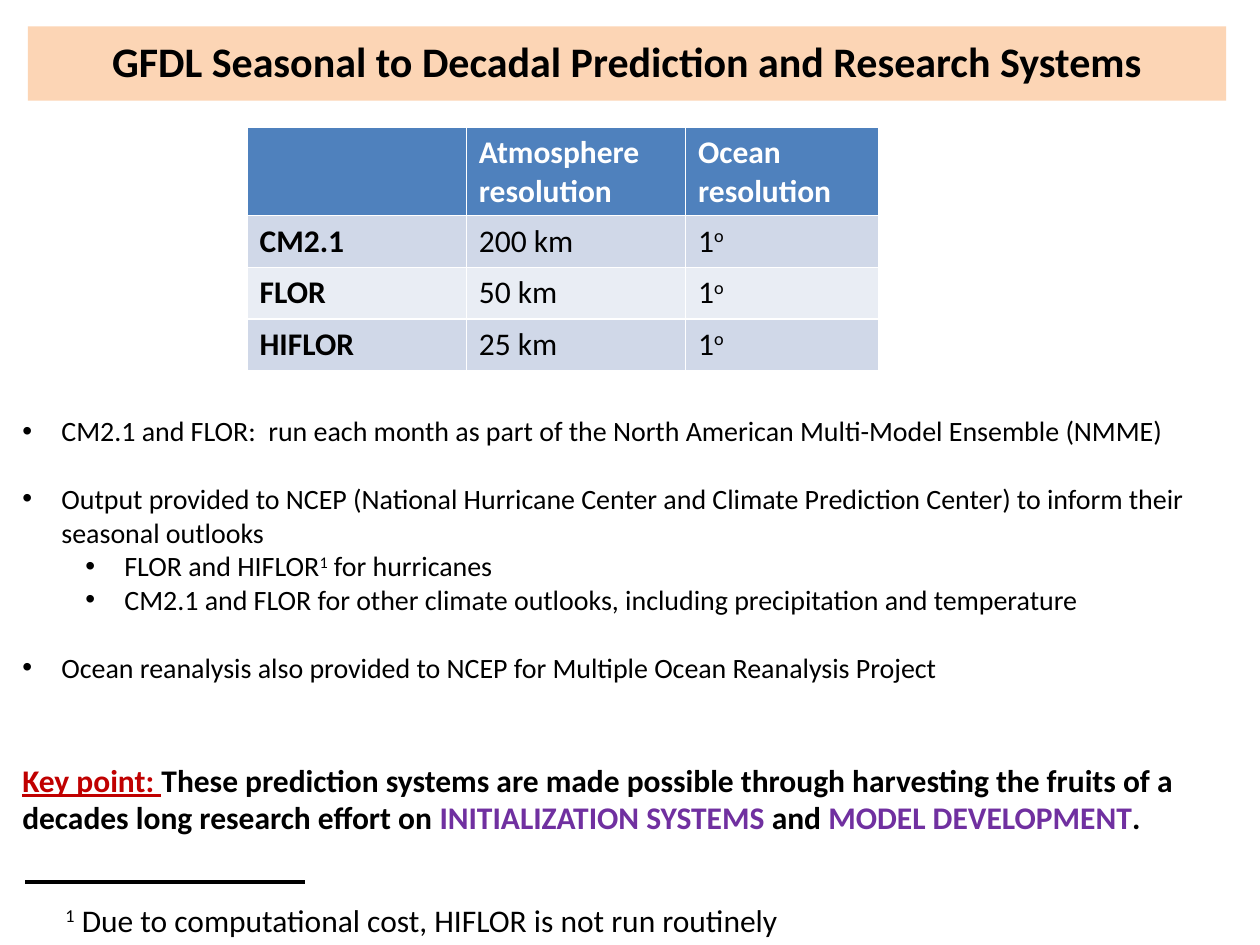
"""Build a slide on seasonal to decadal prediction systems."""
from lxml import etree
from pptx import Presentation
from pptx import util as u
from pptx.dml.color import RGBColor
from pptx.enum import shapes, text
from pptx.oxml.ns import qn

COLORS = {
    "band": "FCD5B5", "head": "4F81BD", "odd": "D0D8E8", "even": "E9EDF4",
    "black": "000000", "white": "FFFFFF", "red": "C00000", "purple": "7030A0",
}
FONT = "Calibri"
TITLE = "GFDL Seasonal to Decadal Prediction and Research Systems"
DEGREE = [("1", {}), ("o", {"sup": True})]
ROWS = [
    ("", "Atmosphere resolution", "Ocean resolution"),
    ("CM2.1", "200 km", DEGREE),
    ("FLOR", "50 km", DEGREE),
    ("HIFLOR", "25 km", DEGREE),
]
COL_WIDTHS = (4.42, 4.42, 3.9)
ROW_HEIGHTS = (1.77, 1.04, 1.04, 1.04)
BULLETS = [
    (0, 0, "CM2.1 and FLOR:  run each month as part of the North American "
           "Multi-Model Ensemble (NMME)"),
    (0, 19.5, "Output provided to NCEP (National Hurricane Center and Climate "
              "Prediction Center) to inform their seasonal outlooks"),
    (1, 0, [("FLOR and HIFLOR", {}), ("1", {"sup": True}), (" for hurricanes", {})]),
    (1, 0, "CM2.1 and FLOR for other climate outlooks, including precipitation "
           "and temperature"),
    (0, 19.5, "Ocean reanalysis also provided to NCEP for Multiple Ocean "
              "Reanalysis Project"),
]
KEY_POINT = [
    ("Key point: ", {"color": "red", "underline": True}),
    ("These prediction systems are made possible through harvesting the fruits "
     "of a decades long research effort on ", {}),
    ("INITIALIZATION SYSTEMS ", {"color": "purple"}),
    ("and ", {}),
    ("MODEL DEVELOPMENT", {"color": "purple"}),
    (".", {}),
]
FOOTNOTE = [("1", {"sup": True}),
            (" Due to computational cost, HIFLOR is not run routinely", {})]


def rgb(name):
    return RGBColor.from_string(COLORS[name])


def write(p, content, size, bold=False, color="black"):
    runs = [(content, {})] if isinstance(content, str) else content
    for words, style in runs:
        r = p.add_run()
        r.text = words
        r.font.name, r.font.size, r.font.bold = FONT, u.Pt(size), bold
        r.font.color.rgb = rgb(style.get("color", color))
        r.font.underline = style.get("underline", False)
        if style.get("sup"):
            r.font._element.set("baseline", "30000")


def add_bullet(p, level):
    p.level = level
    pPr = p._p.get_or_add_pPr()
    pPr.set("marL", str(u.Cm(0.79 + 1.27 * level)))
    pPr.set("indent", str(-u.Cm(0.79)))
    etree.SubElement(pPr, qn("a:buFont")).set("typeface", "Arial")
    etree.SubElement(pPr, qn("a:buChar")).set("char", "•")


def add_title(s):
    sp = s.shapes.title
    sp.left, sp.top, sp.width, sp.height = map(u.Cm, (0.56, 0.53, 24.16, 1.5))
    sp.fill.solid()
    sp.fill.fore_color.rgb = rgb("band")
    tf = sp.text_frame
    tf.vertical_anchor = text.MSO_ANCHOR.TOP
    tf.margin_top = u.Cm(0.18)
    tf.paragraphs[0].alignment = text.PP_ALIGN.CENTER
    write(tf.paragraphs[0], TITLE, 24, bold=True)


def add_resolutions(s):
    table = s.shapes.add_table(
        len(ROWS), len(COL_WIDTHS), u.Cm(4.98), u.Cm(2.57),
        u.Cm(sum(COL_WIDTHS)), u.Cm(sum(ROW_HEIGHTS))).table
    for column, width in zip(table.columns, COL_WIDTHS):
        column.width = u.Cm(width)
    for i, (row, height) in enumerate(zip(ROWS, ROW_HEIGHTS)):
        table.rows[i].height = u.Cm(height)
        fill = "head" if i == 0 else "odd" if i % 2 else "even"
        for j, content in enumerate(row):
            cell = table.cell(i, j)
            cell.fill.solid()
            cell.fill.fore_color.rgb = rgb(fill)
            if content:
                write(cell.text_frame.paragraphs[0], content, 18,
                      bold=i == 0 or j == 0, color="black" if i else "white")


def add_text(s, left, top, width, height, wrap):
    tf = s.shapes.add_textbox(*map(u.Cm, (left, top, width, height))).text_frame
    tf.word_wrap = wrap
    return tf


def add_body(s):
    tf = add_text(s, 0.2, 8.22, 25.5, 9.56, True)
    for i, (level, gap, content) in enumerate(BULLETS):
        p = tf.add_paragraph() if i else tf.paragraphs[0]
        p.space_before = u.Pt(gap)
        add_bullet(p, level)
        write(p, content, 16)
    p = tf.add_paragraph()
    p.space_before = u.Pt(44)
    write(p, KEY_POINT, 18, bold=True)


def add_footnote(s):
    tf = add_text(s, 1.07, 18.03, 15.19, 1.02, False)
    write(tf.paragraphs[0], FOOTNOTE, 18)
    rule = s.shapes.add_connector(
        shapes.MSO_CONNECTOR.STRAIGHT, *map(u.Cm, (0.51, 17.78, 6.15, 17.78)))
    rule.line.color.rgb = rgb("black")
    rule.line.width = u.Pt(2)
    etree.SubElement(rule._element.spPr, qn("a:effectLst"))


def main():
    prs = Presentation()
    prs.slide_width, prs.slide_height = u.Cm(25.4), u.Cm(19.05)
    s = prs.slides.add_slide(prs.slide_layouts[5])
    add_title(s)
    add_body(s)
    add_resolutions(s)
    add_footnote(s)
    prs.save("out.pptx")


if __name__ == "__main__":
    main()
